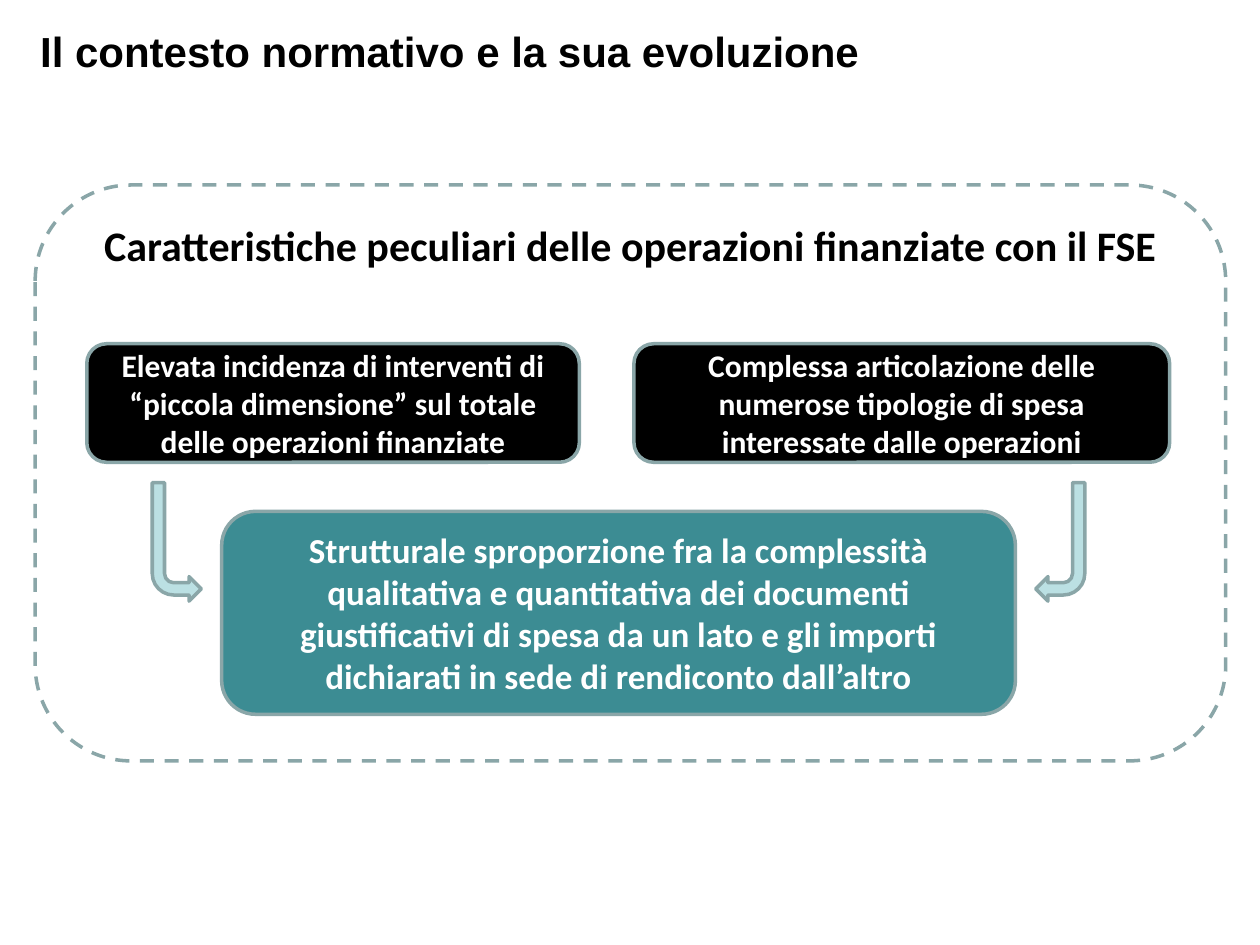
import pptx
import pptx.util
import pptx.dml.color
import pptx.enum.dml
import pptx.enum.shapes
import pptx.enum.text

Cm = pptx.util.Cm
Pt = pptx.util.Pt
KIND = pptx.enum.shapes.MSO_SHAPE
ALIGN = pptx.enum.text.PP_ALIGN
ANCHOR = pptx.enum.text.MSO_ANCHOR

HUES = {
    "black": "000000",
    "white": "FFFFFF",
    "teal": "3C8C93",
    "pale": "BBE0E3",
    "edge": "8AA6A8",
}


def tint(name):
    return pptx.dml.color.RGBColor.from_string(HUES[name])


def write(shape, text, size=18, font="Calibri", hue="white",
          align=ALIGN.CENTER, anchor=ANCHOR.MIDDLE):
    frame = shape.text_frame
    frame.word_wrap = True
    frame.vertical_anchor = anchor
    para = frame.paragraphs[0]
    para.alignment = align
    run = para.add_run()
    run.text = text
    run.font.name = font
    run.font.size = Pt(size)
    run.font.bold = True
    run.font.color.rgb = tint(hue)


deck = pptx.Presentation()
deck.slide_width, deck.slide_height = Cm(25.4), Cm(19.05)
slide = deck.slides.add_slide(deck.slide_layouts[6])

# Frame and boxes: place in cm, fill, text, text format
boxes = [
    ((0.71, 3.73, 24, 11.61), "white",
     "Caratteristiche peculiari delle operazioni finanziate con il FSE",
     {"size": 24, "hue": "black", "anchor": ANCHOR.TOP}),
    ((4.47, 10.31, 16, 4.09), "teal",
     "Strutturale sproporzione fra la complessità qualitativa e quantitativa "
     "dei documenti giustificativi di spesa da un lato e gli importi "
     "dichiarati in sede di rendiconto dall’altro",
     {"size": 20}),
    ((12.78, 6.93, 10.8, 2.39), "black",
     "Complessa articolazione delle numerose tipologie di spesa "
     "interessate dalle operazioni", {}),
    ((1.75, 6.93, 9.93, 2.39), "black",
     "Elevata incidenza di interventi di “piccola dimensione” sul totale "
     "delle operazioni finanziate", {}),
]
parts = []
for place, fill, text, style in boxes:
    box = slide.shapes.add_shape(KIND.ROUNDED_RECTANGLE, *map(Cm, place))
    write(box, text, **style)
    parts.append((box, fill))
parts[0][0].line.dash_style = pptx.enum.dml.MSO_LINE.DASH

# Bent arrows, mirrored towards the lower box
for left, flips in ((3.07, ["flipV"]), (20.88, ["flipH", "flipV"])):
    arrow = slide.shapes.add_shape(
        KIND.BENT_ARROW, Cm(left), Cm(9.73), Cm(0.99), Cm(2.39))
    for flip in flips:
        arrow.element.spPr.xfrm.set(flip, "1")
    parts.append((arrow, "pale"))

# Shared look of all shapes
for shape, fill in parts:
    shape.shadow.inherit = False
    shape.fill.solid()
    shape.fill.fore_color.rgb = tint(fill)
    shape.line.color.rgb = tint("edge")
    shape.line.width = Pt(2)

# Title
title = slide.shapes.add_textbox(Cm(0.56), Cm(0.38), Cm(23.95), Cm(1.27))
write(title, "Il contesto normativo e la sua evoluzione", size=24,
      font="Arial", hue="black", align=ALIGN.JUSTIFY, anchor=ANCHOR.TOP)
title.text_frame.auto_size = pptx.enum.text.MSO_AUTO_SIZE.SHAPE_TO_FIT_TEXT

deck.save("out.pptx")
